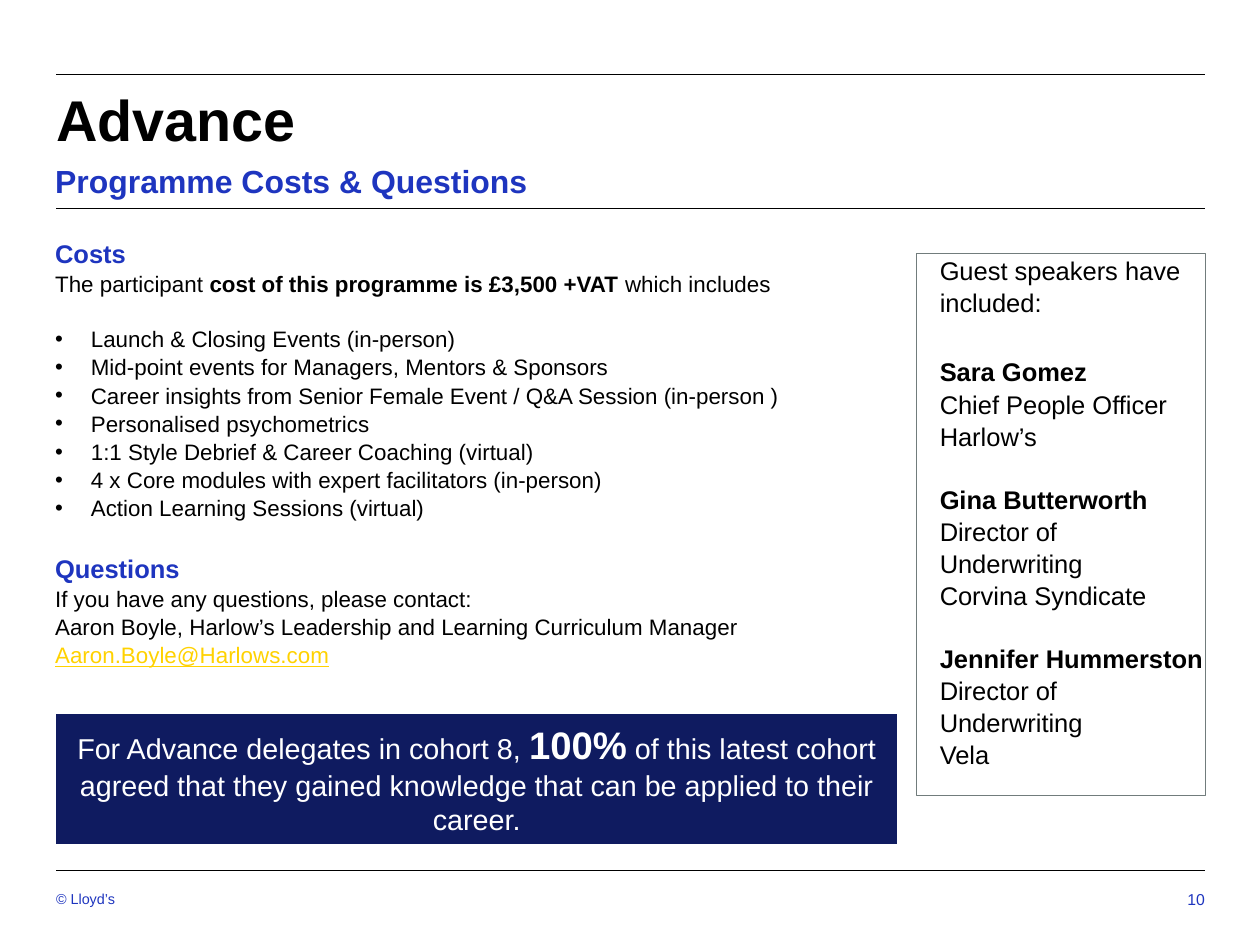
from dataclasses import dataclass

from lxml import etree
from pptx import Presentation
from pptx.dml.color import RGBColor
from pptx.enum import shapes, text
from pptx.oxml import ns
from pptx.shapes.autoshape import Shape
from pptx.slide import Slide
from pptx.util import Cm, Pt

BLACK = RGBColor(0x00, 0x00, 0x00)
WHITE = RGBColor(0xFF, 0xFF, 0xFF)
BLUE = RGBColor(0x1E, 0x35, 0xBF)
NAVY = RGBColor(0x0F, 0x1B, 0x60)
YELLOW = RGBColor(0xFF, 0xD2, 0x00)
GREY = RGBColor(0x71, 0x7C, 0x7C)

FONT = "Arial"
LEFT, RIGHT = 1.24, 26.64
RULES = (1.65, 4.6, 19.25)
BODY_SPACING = 1.05
GAP = 19.3
BULLET_INDENT = 0.79
GUEST_INDENT = 0.51


@dataclass(frozen=True)
class Run:
    words: str
    size: float = 14
    color: RGBColor = BLACK
    bold: bool = False
    underline: bool = False


@dataclass(frozen=True)
class Para:
    runs: tuple[Run, ...]
    before: float = 0
    indent: float = 0
    bullet: bool = False
    spacing: float = 1.0
    align: text.PP_ALIGN = text.PP_ALIGN.LEFT


@dataclass(frozen=True)
class Box:
    left: float
    top: float
    width: float
    height: float
    insets: tuple[float, float, float, float] = (0, 0, 0, 0)
    anchor: text.MSO_ANCHOR = text.MSO_ANCHOR.TOP
    fill: RGBColor | None = None
    line: RGBColor | None = None
    line_width: float = 0


def body(*runs: Run, before: float = 0, bullet: bool = False) -> Para:
    indent = BULLET_INDENT if bullet else 0
    return Para(runs, before, indent, bullet, BODY_SPACING)


def guest(words: str, bold: bool = False, before: float = 0) -> Para:
    return Para((Run(words, 16, bold=bold),), before, GUEST_INDENT, spacing=BODY_SPACING)


INCLUDED = (
    "Launch & Closing Events (in-person)",
    "Mid-point events for Managers, Mentors & Sponsors",
    "Career insights from Senior Female Event / Q&A Session (in-person )",
    "Personalised psychometrics",
    "1:1 Style Debrief & Career Coaching (virtual)",
    "4 x Core modules with expert facilitators (in-person)",
    "Action Learning Sessions (virtual)",
)

SPEAKERS = (
    ("Sara Gomez", "Chief People Officer", "Harlow’s"),
    ("Gina Butterworth", "Director of Underwriting", "Corvina Syndicate"),
    ("Jennifer Hummerston", "Director of Underwriting", "Vela"),
)

PROGRAMME = [
    body(Run("Programme Costs & Questions", 20, BLUE, True)),
    body(Run("Costs", 16, BLUE, True), before=GAP + 4),
    body(
        Run("The participant "),
        Run("cost of this programme is £3,500 +VAT ", bold=True),
        Run("which includes"),
    ),
    *(
        body(Run(item), before=0 if i else 16.9, bullet=True)
        for i, item in enumerate(INCLUDED)
    ),
    body(Run("Questions", 16, BLUE, True), before=GAP),
    body(Run("If you have any questions, please contact:")),
    body(Run("Aaron Boyle, Harlow’s Leadership and Learning Curriculum Manager")),
    body(Run("Aaron.Boyle@Harlows.com", color=YELLOW, underline=True)),
]

GUESTS = [guest("Guest speakers have included:")]
for i, (name, role, employer) in enumerate(SPEAKERS):
    GUESTS += [
        guest(name, True, GAP if i else GAP + 4),
        guest(role),
        guest(employer),
    ]

CALLOUT = Para(
    (
        Run("For Advance delegates in cohort 8, ", 18, WHITE),
        Run("100%", 24, WHITE, True),
        Run(
            " of this latest cohort agreed that they gained knowledge "
            "that can be applied to their career.",
            18,
            WHITE,
        ),
    ),
    align=text.PP_ALIGN.CENTER,
)

MIDDLE = text.MSO_ANCHOR.MIDDLE
CONTENT = (
    (
        Box(20.37, 19.51, 6.27, 0.76, (0, 0.1, 0, 0.1), MIDDLE),
        [Para((Run("10", 9.9, BLUE),), align=text.PP_ALIGN.RIGHT)],
    ),
    (
        Box(LEFT, 1.42, RIGHT - LEFT, 3.2, (0, 0.61, 0, 0.2)),
        [Para((Run("Advance", 36, bold=True),), spacing=0.9)],
    ),
    (
        Box(LEFT, 19.56, 9.4, 0.64, (0, 0.13, 0, 0.13), MIDDLE),
        [Para((Run("© Lloyd’s", 9, BLUE),))],
    ),
    (Box(1.22, 3.43, 18.92, 15.65, (0, 0.1, 0, 0)), PROGRAMME),
    (Box(20.27, 5.61, 6.38, 11.99, line=GREY, line_width=0.75), GUESTS),
    (
        Box(1.22, 15.77, 18.64, 2.92, (0.25, 0.13, 0.25, 0.13), MIDDLE, NAVY, WHITE, 1),
        [CALLOUT],
    ),
)


def draw_rule(s: Slide, y: float) -> None:
    rule = s.shapes.add_connector(
        shapes.MSO_CONNECTOR.STRAIGHT, Cm(LEFT), Cm(y), Cm(RIGHT), Cm(y)
    )
    rule.line.color.rgb = BLACK
    rule.line.width = Pt(0.5)
    etree.SubElement(rule._element.spPr, ns.qn("a:effectLst"))


def write(sp: Shape, paras: list[Para]) -> None:
    tf = sp.text_frame
    for i, para in enumerate(paras):
        p = tf.add_paragraph() if i else tf.paragraphs[0]
        p.alignment = para.align
        p.line_spacing = para.spacing
        p.space_before = Pt(para.before)
        p.space_after = Pt(0)
        pPr = p._p.get_or_add_pPr()
        pPr.set("marL", str(Cm(para.indent)))
        if para.bullet:
            pPr.set("indent", str(-Cm(para.indent)))
            etree.SubElement(pPr, ns.qn("a:buFont"), typeface=FONT)
            etree.SubElement(pPr, ns.qn("a:buChar"), char="•")
        for run in para.runs:
            r = p.add_run()
            r.text = run.words
            r.font.name = FONT
            r.font.size = Pt(run.size)
            r.font.bold = run.bold
            r.font.underline = run.underline
            r.font.color.rgb = run.color


def draw_box(s: Slide, box: Box, paras: list[Para]) -> None:
    frame = Cm(box.left), Cm(box.top), Cm(box.width), Cm(box.height)
    if box.line is None:
        sp = s.shapes.add_textbox(*frame)
    else:
        sp = s.shapes.add_shape(shapes.MSO_SHAPE.RECTANGLE, *frame)
        sp.shadow.inherit = False
        sp.line.color.rgb = box.line
        sp.line.width = Pt(box.line_width)
        if box.fill is None:
            sp.fill.background()
        else:
            sp.fill.solid()
            sp.fill.fore_color.rgb = box.fill
    tf = sp.text_frame
    tf.word_wrap = True
    tf.vertical_anchor = box.anchor
    tf.margin_left, tf.margin_top, tf.margin_right, tf.margin_bottom = map(Cm, box.insets)
    write(sp, paras)


def main() -> None:
    prs = Presentation()
    prs.slide_width, prs.slide_height = Cm(27.86), Cm(20.9)
    s = prs.slides.add_slide(prs.slide_layouts[6])
    for y in RULES:
        draw_rule(s, y)
    for box, paras in CONTENT:
        draw_box(s, box, paras)
    prs.save("out.pptx")


if __name__ == "__main__":
    main()
